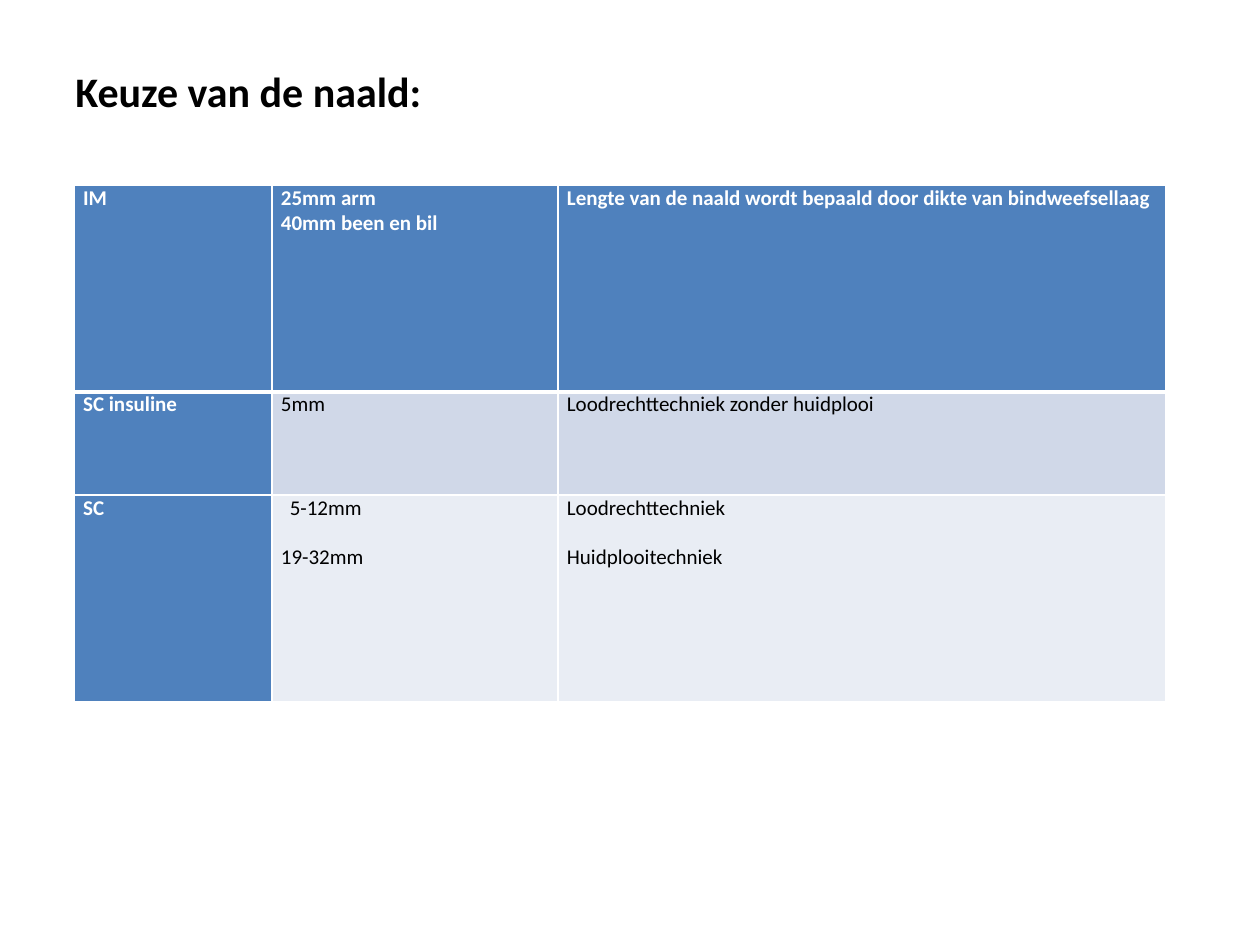
from dataclasses import dataclass

from lxml import etree
from pptx import Presentation
from pptx import util as u
from pptx.dml.color import RGBColor
from pptx.enum import text
from pptx.oxml.ns import qn


@dataclass(frozen=True)
class Theme:
    font: str = "Calibri"
    title_size: int = 24
    body_size: int = 12
    black: str = "000000"
    white: str = "FFFFFF"
    header: str = "4F81BD"
    bands: tuple = ("E9EDF4", "D0D8E8")
    thin: int = 1
    thick: int = 3


theme = Theme()


def write(frame, lines, size=theme.body_size, color=theme.black, bold=False, gap=0, indent=0):
    """Fill a frame, with gap points between lines and the first line indented."""
    for i, line in enumerate(lines):
        paragraph = frame.paragraphs[0] if i == 0 else frame.add_paragraph()
        paragraph.alignment = text.PP_ALIGN.LEFT
        if i:
            paragraph.space_before = u.Pt(gap)
        elif indent:
            paragraph._p.get_or_add_pPr().set("marL", str(u.Inches(indent)))
        run = paragraph.add_run()
        run.text = line
        run.font.name = theme.font
        run.font.size = u.Pt(size)
        run.font.bold = bold
        run.font.color.rgb = RGBColor.from_string(color)


def add_border(cell, side, points):
    line = etree.SubElement(cell._tc.get_or_add_tcPr(), qn(f"a:ln{side}"), w=str(u.Pt(points)))
    fill = etree.SubElement(line, qn("a:solidFill"))
    etree.SubElement(fill, qn("a:srgbClr"), val=theme.white)


prs = Presentation()
prs.slide_width = u.Inches(10)
prs.slide_height = u.Inches(7.5)
slide = prs.slides.add_slide(prs.slide_layouts[6])

# Title
title = slide.shapes.add_textbox(u.Inches(0.5), u.Inches(0.3), u.Inches(9), u.Inches(1.25)).text_frame
title.word_wrap = True
title.vertical_anchor = text.MSO_ANCHOR.TOP
title.margin_top = u.Inches(0.22)
write(title, ["Keuze van de naald:"], size=theme.title_size, bold=True)

# Needle table: route, needle length, technique
needles = [
    (["IM"], ["25mm arm", "40mm been en bil"],
     ["Lengte van de naald wordt bepaald door dikte van bindweefsellaag"]),
    (["SC insuline"], ["5mm"], ["Loodrechttechniek zonder huidplooi"]),
    (["SC"], ["5-12mm", "19-32mm"], ["Loodrechttechniek", "Huidplooitechniek"]),
]
widths = [1.57, 2.27, 4.82]
heights = [1.64, 0.82, 1.64]

table = slide.shapes.add_table(
    len(heights), len(widths), u.Inches(0.59), u.Inches(1.47),
    u.Inches(sum(widths)), u.Inches(sum(heights))).table
for column, width in zip(table.columns, widths):
    column.width = u.Inches(width)
for row, height in zip(table.rows, heights):
    row.height = u.Inches(height)

for r, needle in enumerate(needles):
    for c, lines in enumerate(needle):
        cell = table.cell(r, c)
        cell.margin_left = cell.margin_right = u.Inches(0.07)
        cell.margin_top = cell.margin_bottom = 0
        cell.vertical_anchor = text.MSO_ANCHOR.TOP
        is_header = r == 0 or c == 0
        write(cell.text_frame, lines,
              color=theme.white if is_header else theme.black, bold=is_header,
              gap=13.4 if r == 2 else 0, indent=0.07 if (r, c) == (2, 1) else 0)

        top = theme.thick if r == 1 else theme.thin
        bottom = theme.thick if r == 0 else theme.thin
        for side, points in zip("LRTB", (theme.thin, theme.thin, top, bottom)):
            add_border(cell, side, points)
        cell.fill.solid()
        cell.fill.fore_color.rgb = RGBColor.from_string(
            theme.header if is_header else theme.bands[r % 2])

prs.save("out.pptx")
